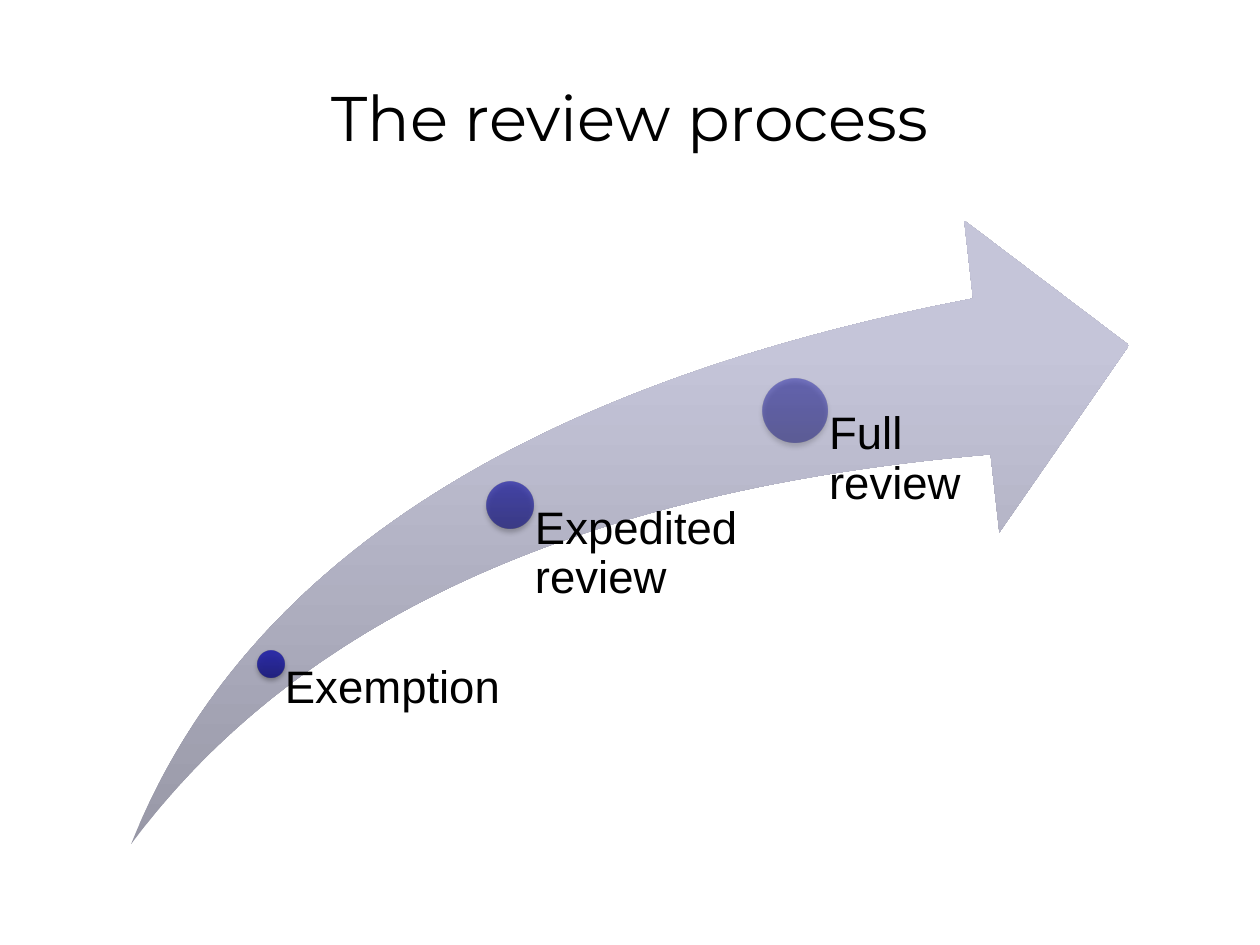
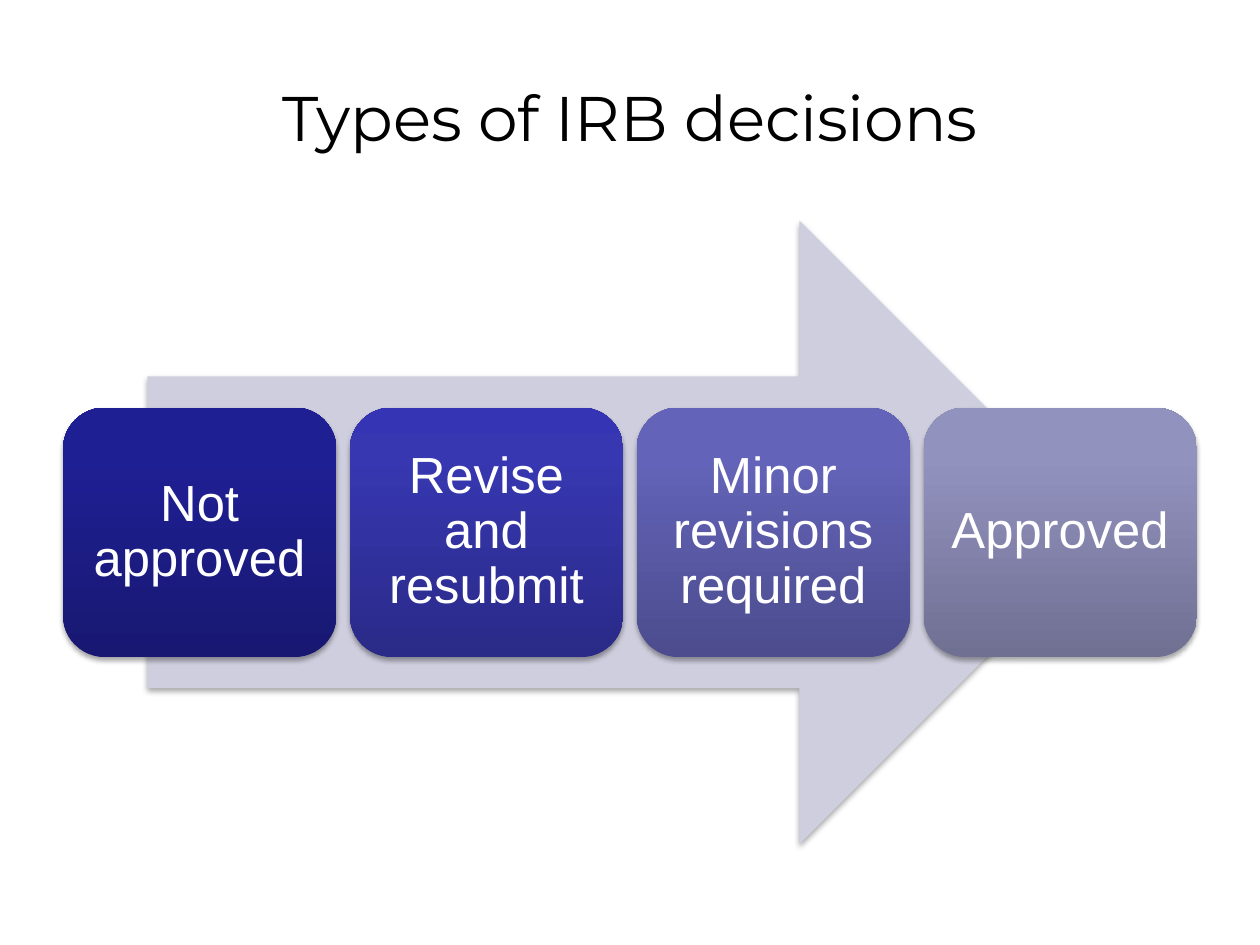
from dataclasses import dataclass

import lxml.etree
import pptx
import pptx.dml.color
import pptx.enum.shapes
import pptx.enum.text
import pptx.util
from pptx.oxml.ns import qn

SHAPE = pptx.enum.shapes.MSO_SHAPE
ALIGN = pptx.enum.text.PP_ALIGN
ANCHOR = pptx.enum.text.MSO_ANCHOR


@dataclass(frozen=True)
class Theme:
    title_font: str = "Montserrat"
    body_font: str = "Arial"
    title_size: int = 36
    label_size: int = 26
    card_size: int = 29
    dark: str = "000000"
    light: str = "FFFFFF"
    pale: str = "CECEDE"
    # Gradients run from bottom to top, with stops at GRADIENT_STOPS
    swoosh: tuple = ("9898A7", "C5C5D9", "C6C6DA")
    dot: tuple = ("1B1B7E", "2323A3", "2020A6")
    cards: tuple = (
        ("181872", "1F1F94", "1D1D97"),
        ("2A2A88", "3737B1", "3434B4"),
        ("4C4C8E", "6363B9", "6262BB"),
        ("707093", "9292BF", "9191C0"),
    )


GRADIENT_STOPS = (0, 80, 100)
COLUMNS, ROWS = 100, 75
# Both diagrams fill the same band below the title
DIAGRAM_TOP, DIAGRAM_HEIGHT = 17.5, 49.5
DIAGRAM_BOTTOM = DIAGRAM_TOP + DIAGRAM_HEIGHT


def add_color(parent, color, alpha):
    """Add an RGB colour with an opacity in percent."""
    node = lxml.etree.SubElement(parent, qn("a:srgbClr"), val=color)
    if alpha < 100:
        lxml.etree.SubElement(node, qn("a:alpha"), val=str(alpha * 1000))


class Deck:
    def __init__(self, theme):
        self.theme = theme
        self.presentation = pptx.Presentation()
        self.presentation.slide_width = pptx.util.Inches(10)
        self.presentation.slide_height = pptx.util.Inches(7.5)
        self.slide = None
        self.diagram = None

    def box(self, left, top, width, height):
        """Turn grid columns and rows into slide lengths."""
        column = self.presentation.slide_width / COLUMNS
        row = self.presentation.slide_height / ROWS
        return [round(n) for n in (left * column, top * row, width * column, height * row)]

    def add_slide(self, title):
        layout = self.presentation.slide_layouts.get_by_name("Title Only")
        self.slide = self.presentation.slides.add_slide(layout)
        shape = self.slide.shapes.title
        shape.left, shape.top, shape.width, shape.height = self.box(5, 3, 90, 12.5)
        self.add_text(shape, title, self.theme.title_size, self.theme.dark,
                      font=self.theme.title_font, align=ALIGN.CENTER, anchor=ANCHOR.MIDDLE)
        self.diagram = self.slide.shapes.add_group_shape().shapes

    def add_text(self, shape, text, size, color, font=None, align=ALIGN.LEFT, anchor=ANCHOR.TOP):
        frame = shape.text_frame
        frame.word_wrap = True
        frame.auto_size = pptx.enum.text.MSO_AUTO_SIZE.NONE
        frame.vertical_anchor = anchor
        paragraph = frame.paragraphs[0]
        paragraph.alignment = align
        run = paragraph.add_run()
        run.text = text
        run.font.name = font or self.theme.body_font
        run.font.size = pptx.util.Pt(size)
        run.font.color.rgb = pptx.dml.color.RGBColor.from_string(color)
        return paragraph

    def set_insets(self, shape, left, top=0, right=0, bottom=0):
        frame = shape.text_frame
        frame.margin_left, frame.margin_top, frame.margin_right, frame.margin_bottom = (
            pptx.util.Inches(n) for n in (left, top, right, bottom))

    def add_body_text(self, shape, text, size, color, **layout):
        paragraph = self.add_text(shape, text, size, color, **layout)
        paragraph.line_spacing = 0.9
        paragraph.space_after = pptx.util.Pt(round(size * 0.35))

    def add_shape(self, kind, box, fill, alpha=100, shadow=True):
        """Add a borderless shape; fill is one colour or a gradient."""
        shape = self.diagram.add_shape(kind, *self.box(*box))
        if isinstance(fill, str):
            shape.fill.solid()
            shape.fill.fore_color.rgb = pptx.dml.color.RGBColor.from_string(fill)
        else:
            self.set_gradient(shape, fill, alpha)
        shape.line.fill.background()
        shape.shadow.inherit = False
        if shadow:
            self.add_shadow(shape)
        return shape

    def set_gradient(self, shape, colors, alpha):
        shape.fill.gradient()
        shape.fill.gradient_angle = 90
        stops = shape.element.spPr.find(".//" + qn("a:gsLst"))
        for stop in list(stops):
            stops.remove(stop)
        for position, color in zip(GRADIENT_STOPS, colors):
            stop = lxml.etree.SubElement(stops, qn("a:gs"), pos=str(position * 1000))
            add_color(stop, color, alpha)

    def add_shadow(self, shape):
        effects = shape.element.spPr.find(qn("a:effectLst"))
        shadow = lxml.etree.SubElement(
            effects, qn("a:outerShdw"), blurRad=str(int(pptx.util.Pt(3.1))),
            dist=str(int(pptx.util.Pt(1.8))), dir="5400000", rotWithShape="0")
        add_color(shadow, "000000", 35)

    def add_milestone(self, text, center, size, alpha, width):
        """Add a dot and the label that starts at its centre."""
        x, y = center
        self.add_shape(SHAPE.OVAL, (x - size / 2, y - size / 2, size, size),
                       self.theme.dot, alpha)
        label = self.diagram.add_textbox(*self.box(x, y, width, DIAGRAM_BOTTOM - y))
        self.set_insets(label, left=size * 0.053)
        self.add_body_text(label, text, self.theme.label_size, self.theme.dark)

    def add_card(self, text, box, fill):
        card = self.add_shape(SHAPE.ROUNDED_RECTANGLE, box, fill)
        self.set_insets(card, 0.12, 0.12, 0.12, 0.12)
        self.add_body_text(card, text, self.theme.card_size, self.theme.light,
                           align=ALIGN.CENTER, anchor=ANCHOR.MIDDLE)


def build_review_process(deck):
    deck.add_slide("The review process")
    # Rising arrow
    arrow = deck.add_shape(SHAPE.SWOOSH_ARROW, (10.4, DIAGRAM_TOP, 79.2, DIAGRAM_HEIGHT),
                           deck.theme.swoosh, shadow=False)
    arrow.adjustments[0] = 0.25
    arrow.adjustments[1] = 0.25
    # Milestones: text, dot centre, dot size, opacity, label width
    milestones = (
        ("Exemption", (21.5, 52.7), 2.1, 90, 18.5),
        ("Expedited review", (40.5, 40.1), 3.7, 70, 19),
        ("Full review", (63.1, 32.6), 5.1, 50, 19),
    )
    for milestone in milestones:
        deck.add_milestone(*milestone)


def build_decisions(deck):
    deck.add_slide("Types of IRB decisions")
    # Background arrow
    deck.add_shape(SHAPE.RIGHT_ARROW, (11.7, DIAGRAM_TOP, 76.5, DIAGRAM_HEIGHT),
                   deck.theme.pale)
    # Row of cards, centred on the arrow
    decisions = ("Not approved", "Revise and resubmit", "Minor revisions required", "Approved")
    left, row_width, card_width = 5, 90, 21.7
    pitch = (row_width - card_width) / (len(decisions) - 1)
    height = DIAGRAM_HEIGHT * 0.4
    top = DIAGRAM_TOP + (DIAGRAM_HEIGHT - height) / 2
    for index, (text, fill) in enumerate(zip(decisions, deck.theme.cards)):
        deck.add_card(text, (left + index * pitch, top, card_width, height), fill)


def main():
    deck = Deck(Theme())
    build_review_process(deck)
    build_decisions(deck)
    deck.presentation.save("out.pptx")


if __name__ == "__main__":
    main()
